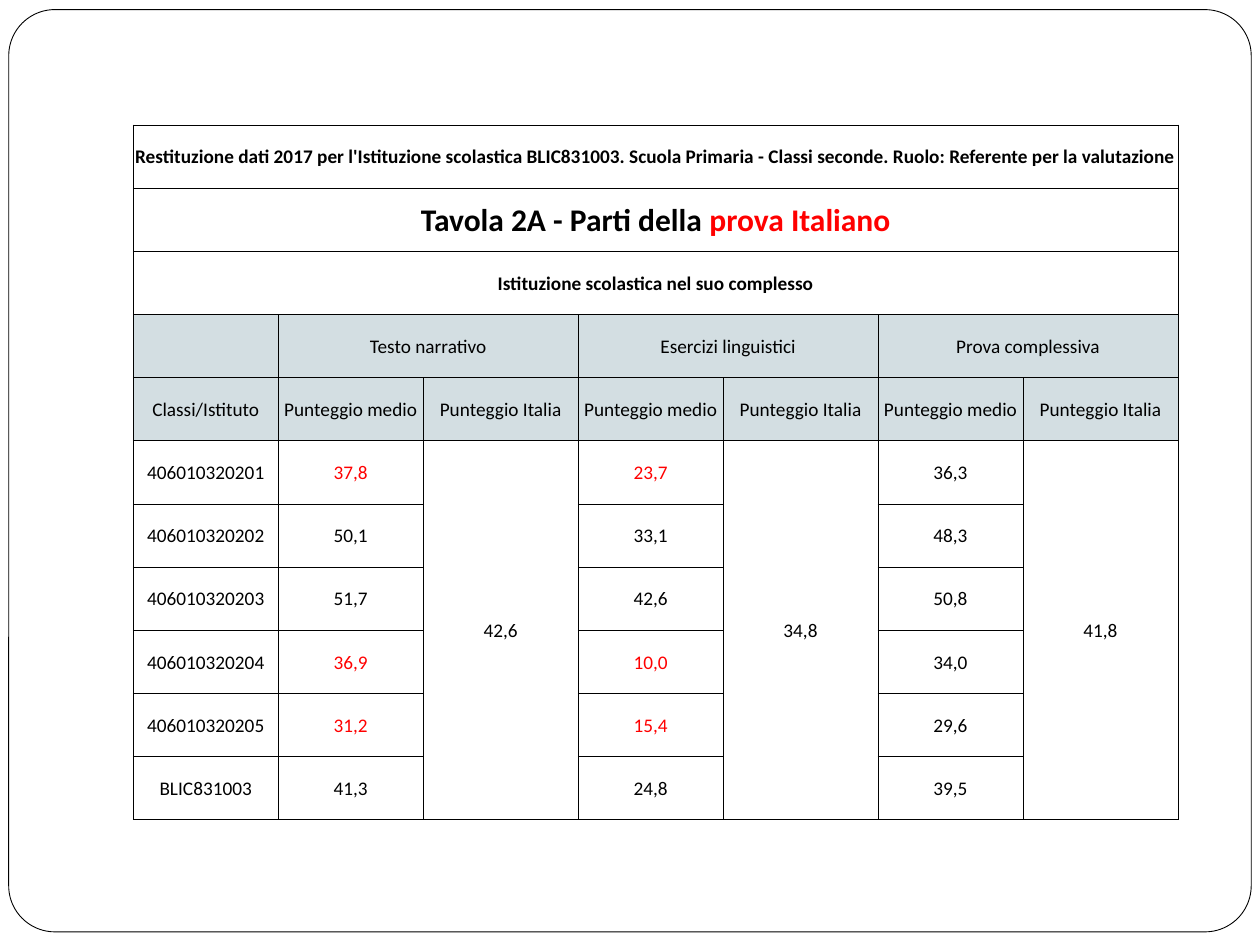
from lxml.etree import SubElement
from pptx import Presentation
from pptx.dml.color import RGBColor as RGB
from pptx.enum.shapes import MSO_SHAPE as Shape
from pptx.enum.text import MSO_ANCHOR as Anchor, PP_ALIGN as Align
from pptx.oxml.ns import qn
from pptx.util import Pt

THEME = {
    "font": "Calibri", "body": 11, "heading": 18, "rule": 0.5,
    "ink": "000000", "alert": "FF0000", "paper": "FFFFFF", "header": "D3DEE2",
}

BANNERS = [
    ([("Restituzione dati 2017 per l'Istituzione scolastica BLIC831003. "
       "Scuola Primaria - Classi seconde. Ruolo: Referente per la valutazione", "ink")], "body"),
    ([("Tavola 2A - Parti della ", "ink"), ("prova Italiano", "alert")], "heading"),
    ([("Istituzione scolastica nel suo complesso", "ink")], "body"),
]
CLASS_HEADER = "Classi/Istituto"
SCORE_HEADERS = ["Punteggio medio", "Punteggio Italia"]
CLASSES = ["406010320201", "406010320202", "406010320203",
           "406010320204", "406010320205", "BLIC831003"]
SECTIONS = [
    ("Testo narrativo", "42,6", ["37,8", "50,1", "51,7", "36,9", "31,2", "41,3"], {0, 3, 4}),
    ("Esercizi linguistici", "34,8", ["23,7", "33,1", "42,6", "10,0", "15,4", "24,8"], {0, 3, 4}),
    ("Prova complessiva", "41,8", ["36,3", "48,3", "50,8", "34,0", "29,6", "39,5"], set()),
]

LEFT, TOP, ROW_HEIGHT = 76.2, 71.5, 36.1
CLASS_WIDTH, MEAN_WIDTH, ITALY_WIDTH = 82.8, 82.8, 88.6
WIDTHS = [CLASS_WIDTH] + [MEAN_WIDTH, ITALY_WIDTH] * len(SECTIONS)
SECTION_ROW = len(BANNERS)
HEADER_ROW = SECTION_ROW + 1
FIRST_ROW = HEADER_ROW + 1
ROW_COUNT = FIRST_ROW + len(CLASSES)


def color(role):
    return RGB.from_string(THEME[role])


def write(cell, pieces, size="body", bold=False):
    paragraph = cell.text_frame.paragraphs[0]
    paragraph.alignment = Align.CENTER
    for wording, role in pieces:
        run = paragraph.add_run()
        run.text = wording
        run.font.name = THEME["font"]
        run.font.size = Pt(THEME[size])
        run.font.bold = bold
        run.font.color.rgb = color(role)


def style(cell, fill):
    cell.vertical_anchor = Anchor.MIDDLE
    cell.margin_left = cell.margin_right = cell.margin_top = Pt(0.7)
    cell.margin_bottom = 0
    properties = cell._tc.get_or_add_tcPr()
    for side in ("lnL", "lnR", "lnT", "lnB"):
        border = SubElement(properties, qn(f"a:{side}"), w=str(Pt(THEME["rule"])))
        solid = SubElement(border, qn("a:solidFill"))
        SubElement(solid, qn("a:srgbClr"), val=THEME["ink"])
    cell.fill.solid()
    cell.fill.fore_color.rgb = color(fill)


def add_frame(slide):
    frame = slide.shapes.add_shape(Shape.ROUNDED_RECTANGLE, Pt(5), Pt(5.5), Pt(710), Pt(527))
    frame.adjustments[0] = 0.05
    frame.shadow.inherit = False
    frame.fill.solid()
    frame.fill.fore_color.rgb = color("paper")
    frame.line.color.rgb = color("ink")
    frame.line.width = Pt(THEME["rule"])


def add_scores(slide):
    scores = slide.shapes.add_table(
        ROW_COUNT, len(WIDTHS), Pt(LEFT), Pt(TOP),
        Pt(sum(WIDTHS)), Pt(ROW_HEIGHT * ROW_COUNT)).table
    for column, width in zip(scores.columns, WIDTHS):
        column.width = Pt(width)
    for index, row in enumerate(scores.rows):
        row.height = Pt(ROW_HEIGHT)
        for cell in row.cells:
            style(cell, "header" if SECTION_ROW <= index <= HEADER_ROW else "paper")

    for index, (pieces, size) in enumerate(BANNERS):
        banner = scores.cell(index, 0)
        banner.merge(scores.cell(index, len(WIDTHS) - 1))
        write(banner, pieces, size, bold=True)

    for index, label in enumerate([CLASS_HEADER] + CLASSES, HEADER_ROW):
        write(scores.cell(index, 0), [(label, "ink")])

    for section, (heading, italy, means, alerts) in enumerate(SECTIONS):
        mean_column = 1 + section * len(SCORE_HEADERS)
        italy_column = mean_column + 1
        scores.cell(SECTION_ROW, mean_column).merge(scores.cell(SECTION_ROW, italy_column))
        write(scores.cell(SECTION_ROW, mean_column), [(heading, "ink")])
        for column, label in enumerate(SCORE_HEADERS, mean_column):
            write(scores.cell(HEADER_ROW, column), [(label, "ink")])
        for index, mean in enumerate(means):
            role = "alert" if index in alerts else "ink"
            write(scores.cell(FIRST_ROW + index, mean_column), [(mean, role)])
        scores.cell(FIRST_ROW, italy_column).merge(scores.cell(ROW_COUNT - 1, italy_column))
        write(scores.cell(FIRST_ROW, italy_column), [(italy, "ink")])


def main():
    deck = Presentation()
    deck.slide_width, deck.slide_height = Pt(720), Pt(540)
    slide = deck.slides.add_slide(deck.slide_layouts[6])
    add_frame(slide)
    add_scores(slide)
    deck.save("out.pptx")


if __name__ == "__main__":
    main()
